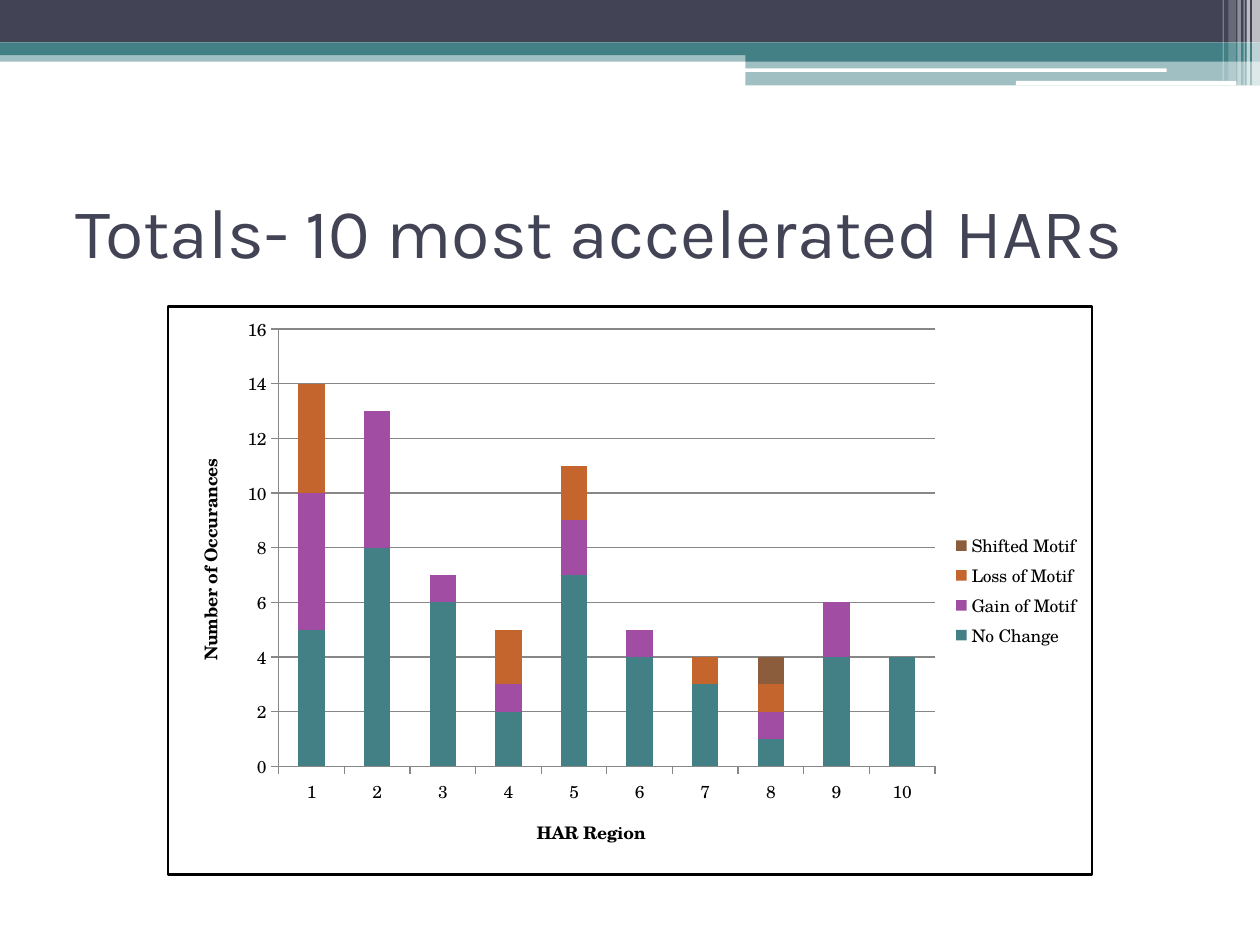
from lxml.etree import SubElement
from pptx import Presentation
from pptx.chart.data import CategoryChartData
from pptx.dml.color import RGBColor
from pptx.enum.chart import XL_CHART_TYPE, XL_LEGEND_POSITION, XL_TICK_MARK
from pptx.enum.shapes import MSO_SHAPE
from pptx.enum.text import MSO_ANCHOR, PP_ALIGN
from pptx.oxml import parse_xml
from pptx.oxml.ns import nsdecls, qn
from pptx.util import Pt

COLORS = {
    "ink": "424456",
    "teal": "438086",
    "purple": "A04DA3",
    "orange": "C4652D",
    "brown": "8B5D3D",
    "grid": "878787",
    "black": "000000",
    "white": "FFFFFF",
}
TITLE_FONT = "Karla"
CHART_FONT = "TeX Gyre Schola"
REGIONS = [str(number) for number in range(1, 11)]
SERIES = [
    ("No Change", "teal", (5, 8, 6, 2, 7, 4, 3, 1, 4, 4)),
    ("Gain of Motif", "purple", (5, 5, 1, 1, 2, 1, 0, 1, 2, 0)),
    ("Loss of Motif", "orange", (4, 0, 0, 2, 2, 0, 1, 1, 0, 0)),
    ("Shifted Motif", "brown", (0, 0, 0, 0, 0, 0, 0, 1, 0, 0)),
]
BANDS = [
    (0, 28.8, 720, 6.48, "teal", 50),
    (0, 0, 720, 24.3, "ink", 100),
    (0, 24.3, 720, 7.2, "teal", 100),
    (426, 28.08, 294, 7.2, "teal", 100),
    (426, 35.28, 294, 13.5, "teal", 50),
]
ROUNDED_LINES = [(425.5, 39.1, 241.2, 2), (580.5, 46.2, 126, 2.6)]
STRIPES = [
    (715.5, 4.5, 48.9, 65),
    (712.3, 2, 48.9, 65),
    (710.6, 0.72, 48.9, 60),
    (707.1, 2, 48.9, 40),
    (702, 4.3, 46.1, 20),
    (698.7, 0.72, 46.1, 30),
]


def rgb(name):
    return RGBColor.from_string(COLORS[name])


def add_block(slide, kind, box, color, opacity=100):
    shape = slide.shapes.add_shape(kind, *(Pt(length) for length in box))
    shape.shadow.inherit = False
    shape.line.fill.background()
    shape.fill.solid()
    shape.fill.fore_color.rgb = rgb(color)
    if opacity < 100:
        color_element = shape._element.spPr.find(qn("a:solidFill"))[0]
        SubElement(color_element, qn("a:alpha"), val=str(opacity * 1000))


def add_header(slide, left, top):
    for x, y, width, height, color, opacity in BANDS:
        box = (left + x, top + y, width, height)
        add_block(slide, MSO_SHAPE.RECTANGLE, box, color, opacity)
    for x, y, width, height in ROUNDED_LINES:
        box = (left + x, top + y, width, height)
        add_block(slide, MSO_SHAPE.ROUNDED_RECTANGLE, box, "white")
    for x, width, height, opacity in STRIPES:
        box = (left + x, top, width, height)
        add_block(slide, MSO_SHAPE.RECTANGLE, box, "white", opacity)


def set_title(slide, left, top, width, height):
    title = slide.shapes.title
    title.left, title.top = Pt(left), Pt(top)
    title.width, title.height = Pt(width), Pt(height)
    text_frame = title.text_frame
    text_frame.text = "Totals- 10 most accelerated HARs"
    text_frame.vertical_anchor = MSO_ANCHOR.MIDDLE
    paragraph = text_frame.paragraphs[0]
    paragraph.alignment = PP_ALIGN.LEFT
    font = paragraph.runs[0].font
    font.name, font.size = TITLE_FONT, Pt(40)
    font.color.rgb = rgb("ink")


def format_font(font, bold=False):
    font.name, font.size, font.bold = CHART_FONT, Pt(10), bold
    font.color.rgb = rgb("black")


def format_axis(axis, title):
    axis.axis_title.text_frame.text = title
    format_font(axis.axis_title.text_frame.paragraphs[0].runs[0].font, bold=True)
    format_font(axis.tick_labels.font)
    axis.major_tick_mark = XL_TICK_MARK.OUTSIDE
    axis.minor_tick_mark = XL_TICK_MARK.NONE
    axis.format.line.color.rgb = rgb("grid")
    axis.format.line.width = Pt(0.75)


def frame_chart(chart):
    chart_element = chart.element.find(qn("c:chart"))
    chart_element.addnext(parse_xml(
        f'<c:spPr {nsdecls("c", "a")}>'
        f'<a:solidFill><a:srgbClr val="{COLORS["white"]}"/></a:solidFill>'
        f'<a:ln w="{Pt(1.5)}"><a:solidFill><a:srgbClr val="{COLORS["black"]}"/>'
        '</a:solidFill></a:ln></c:spPr>'
    ))
    layout = parse_xml(
        f'<c:layout {nsdecls("c")}><c:manualLayout><c:layoutTarget val="inner"/>'
        '<c:xMode val="edge"/><c:yMode val="edge"/><c:x val="0.12"/>'
        '<c:y val="0.04"/><c:w val="0.71"/><c:h val="0.77"/>'
        '</c:manualLayout></c:layout>'
    )
    chart_element.find(qn("c:plotArea")).insert(0, layout)


def add_motif_chart(slide, left, top, width, height):
    data = CategoryChartData()
    data.categories = REGIONS
    for name, _, values in SERIES:
        data.add_series(name, values)
    chart = slide.shapes.add_chart(
        XL_CHART_TYPE.COLUMN_STACKED, Pt(left), Pt(top), Pt(width), Pt(height), data
    ).chart
    format_font(chart.font)
    chart.has_title = False
    chart.has_legend = True
    chart.legend.position = XL_LEGEND_POSITION.RIGHT
    chart.legend.include_in_layout = False
    format_font(chart.legend.font)

    plot = chart.plots[0]
    plot.gap_width, plot.overlap = 150, 100
    plot.vary_by_categories = False
    for series, (_, color, _) in zip(plot.series, SERIES):
        series.format.fill.solid()
        series.format.fill.fore_color.rgb = rgb(color)

    format_axis(chart.category_axis, "HAR Region")
    format_axis(chart.value_axis, "Number of Occurances")
    value_axis = chart.value_axis
    value_axis.minimum_scale, value_axis.maximum_scale = 0, 16
    value_axis.major_unit = 2
    value_axis.has_major_gridlines = True
    value_axis.major_gridlines.format.line.color.rgb = rgb("grid")
    value_axis.major_gridlines.format.line.width = Pt(0.75)
    frame_chart(chart)


def main():
    presentation = Presentation()
    presentation.slide_width, presentation.slide_height = Pt(720), Pt(540)
    slide = presentation.slides.add_slide(presentation.slide_layouts[5])
    slide.background.fill.solid()
    slide.background.fill.fore_color.rgb = rgb("white")
    add_header(slide, 0, 0)
    set_title(slide, 36, 90, 648, 84)
    add_motif_chart(slide, 95.2, 174.4, 529.6, 326)
    presentation.save("out.pptx")


if __name__ == "__main__":
    main()
